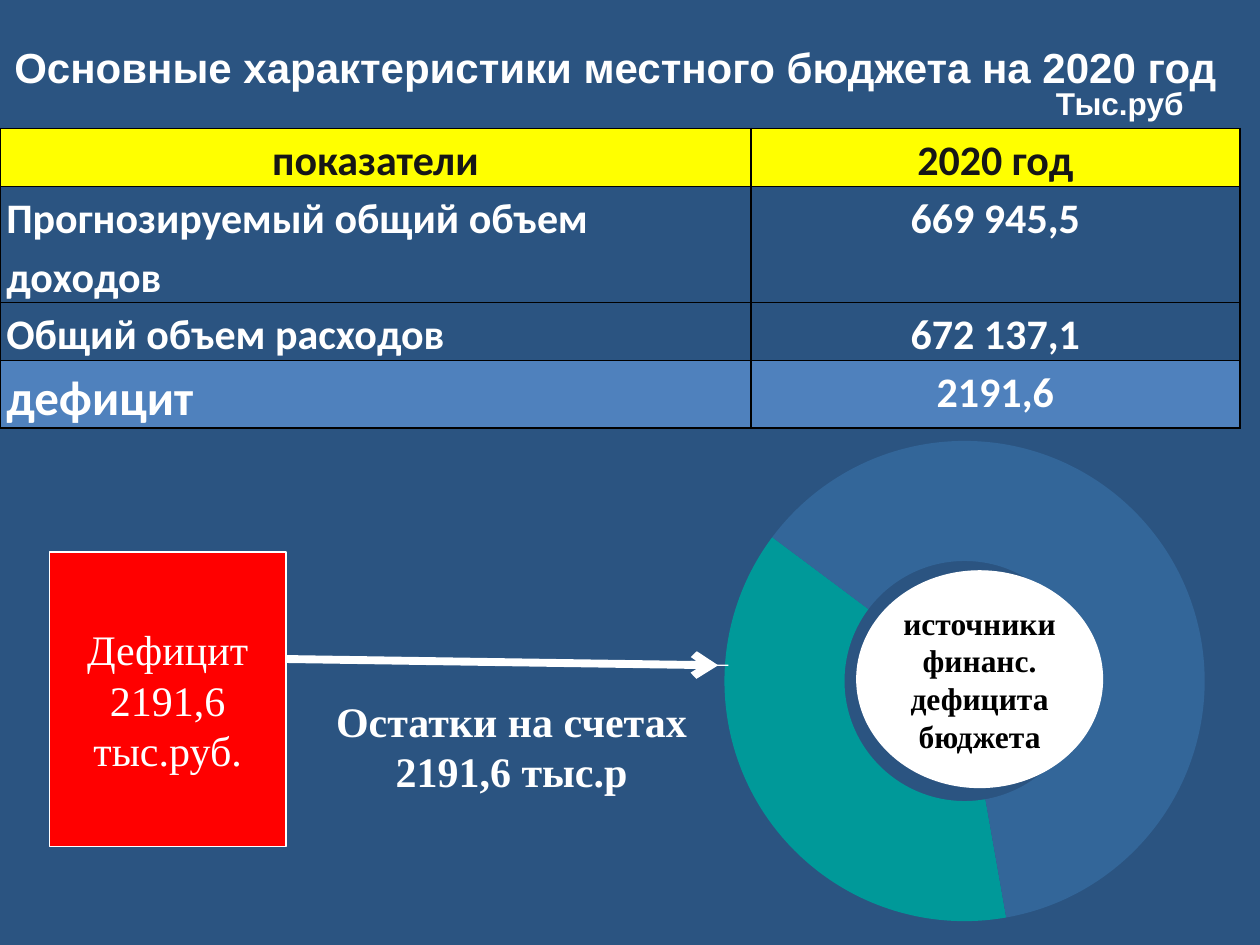
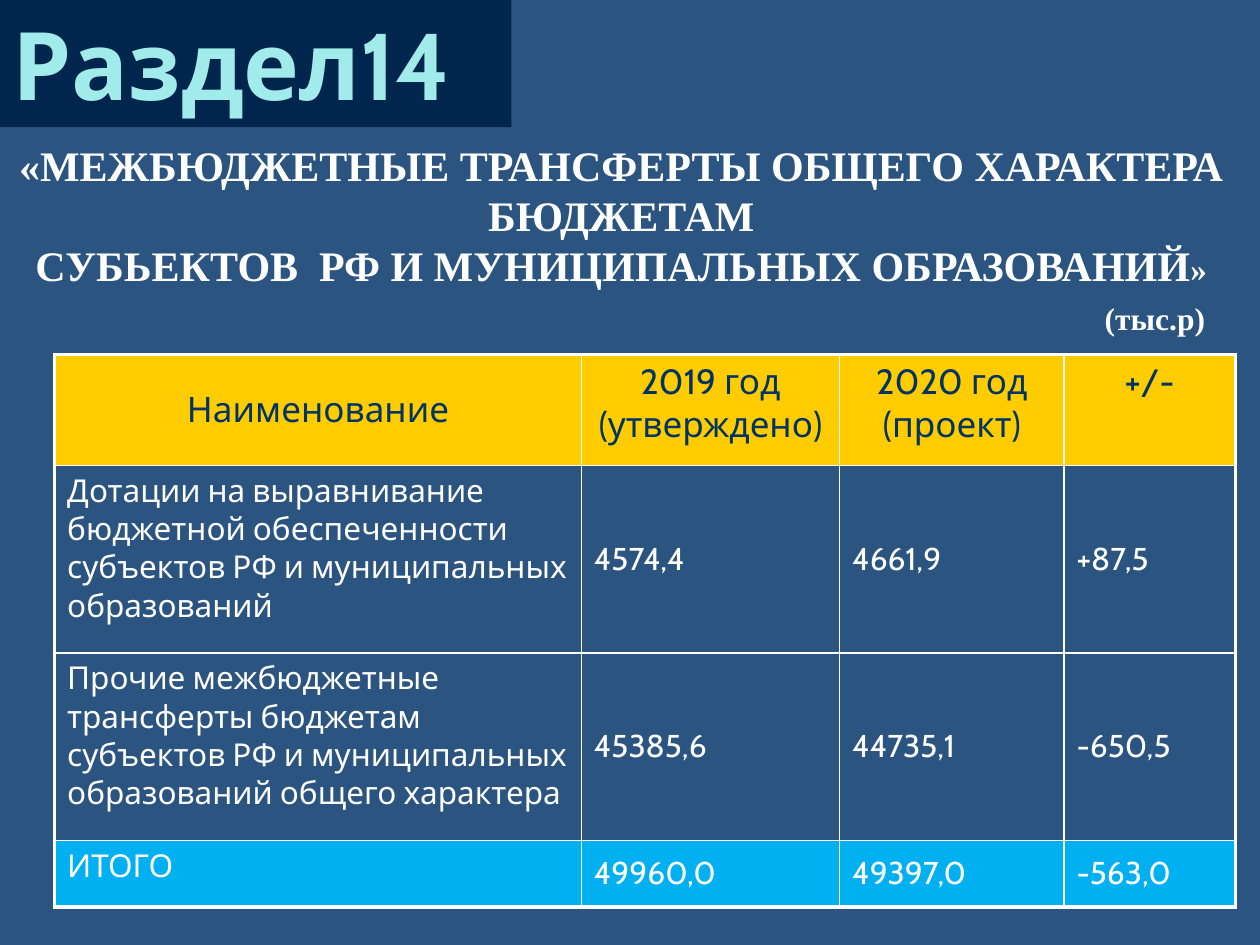
"""Builds two slides on the 2020 local budget: key figures and transfers between budgets."""
import copy

import lxml.etree
import pptx
import pptx.chart.data
import pptx.dml.color
import pptx.enum.chart
import pptx.enum.shapes
import pptx.enum.text
import pptx.oxml
import pptx.oxml.ns
import pptx.util

Pt = pptx.util.Pt
qn = pptx.oxml.ns.qn
rgb = pptx.dml.color.RGBColor.from_string
LEFT, CENTER = pptx.enum.text.PP_ALIGN.LEFT, pptx.enum.text.PP_ALIGN.CENTER
TOP, MIDDLE = pptx.enum.text.MSO_ANCHOR.TOP, pptx.enum.text.MSO_ANCHOR.MIDDLE
SHAPE = pptx.enum.shapes.MSO_SHAPE
WHITE, BACKGROUND = "FFFFFF", "2B5481"
SERIF = "Times New Roman"


def write(tf, text, size=24, font=SERIF, color=WHITE, bold=False, align=LEFT,
          anchor=TOP, wrap=True, spacing=1.0):
    """Write one paragraph per line of text and return the last paragraph."""
    tf.word_wrap = wrap
    tf.vertical_anchor = anchor
    for i, line in enumerate(text.split("\n")):
        p = tf.add_paragraph() if i else tf.paragraphs[0]
        p.alignment, p.line_spacing = align, spacing
        p.space_before = Pt(0)
        r = p.add_run()
        r.text = line
        r.font.size, r.font.name, r.font.bold = Pt(size), font, bold
        r.font.color.rgb = rgb(color)
    return p


def add_grid(s, left, top, widths, heights, line, edge):
    """Add a plain table with 1 pt inner lines and outer lines of the edge width."""
    frame = s.shapes.add_table(len(heights), len(widths), Pt(left), Pt(top),
                               Pt(sum(widths)), Pt(sum(heights)))
    table = frame.table
    table.first_row = table.horz_banding = False
    for col, width in zip(table.columns, widths):
        col.width = Pt(width)
    for row, height in zip(table.rows, heights):
        row.height = Pt(height)
    for i in range(len(heights)):
        for j in range(len(widths)):
            cell = table.cell(i, j)
            outer = {"L": j == 0, "R": j == len(widths) - 1,
                     "T": i == 0, "B": i == len(heights) - 1}
            for side, is_outer in outer.items():
                ln = lxml.etree.SubElement(cell._tc.get_or_add_tcPr(), qn("a:ln" + side),
                                           w=str(Pt(edge if is_outer else 1)))
                fill = lxml.etree.SubElement(ln, qn("a:solidFill"))
                lxml.etree.SubElement(fill, qn("a:srgbClr"), val=line)
            cell.fill.background()
    return table


prs = pptx.Presentation()
prs.slide_width, prs.slide_height = Pt(720), Pt(540)
titles = [
    ("Основные характеристики местного бюджета на 2020 год", "Arial", (0, 20.2, 703.4, 36)),
    ("«МЕЖБЮДЖЕТНЫЕ ТРАНСФЕРТЫ ОБЩЕГО ХАРАКТЕРА\nБЮДЖЕТАМ\n"
     "СУБЬЕКТОВ  РФ И МУНИЦИПАЛЬНЫХ ОБРАЗОВАНИЙ", SERIF, (0, 79.5, 710, 86)),
]
for text, font, box in titles:
    s = prs.slides.add_slide(prs.slide_layouts[5])
    s.background.fill.solid()
    s.background.fill.fore_color.rgb = rgb(BACKGROUND)
    sp = s.shapes.title
    sp.left, sp.top, sp.width, sp.height = map(Pt, box)
    tf = sp.text_frame
    tf.auto_size = pptx.enum.text.MSO_AUTO_SIZE.NONE
    tf.margin_left = tf.margin_right = 0
    title_end = write(tf, text, font=font, bold=True, align=CENTER)
    if font == "Arial":
        tf.margin_top = Pt(3.6)
    else:
        tf.margin_top = 0
budget, transfers = prs.slides

quote = copy.deepcopy(title_end.runs[0]._r)
title_end._p.append(quote)
title_end.runs[1].text = "»"
title_end.runs[1].font.size = Pt(19)

data = pptx.chart.data.CategoryChartData()
data.categories = ["1", "2"]
data.add_series("Series 1", (38, 62))
chart = budget.shapes.add_chart(pptx.enum.chart.XL_CHART_TYPE.DOUGHNUT, Pt(405.2), Pt(243.2),
                                Pt(292), Pt(292), data).chart
chart.has_title = chart.has_legend = False
chart.font.size, chart.font.name = Pt(18), "Cabin"
chart.font.color.rgb = rgb(WHITE)
plot = chart.plots[0]
plot.has_data_labels = False
for i, color in enumerate(("009999", "336699")):
    fmt = plot.series[0].points[i].format
    fmt.fill.solid()
    fmt.fill.fore_color.rgb = rgb(color)
    fmt.line.fill.background()
area = chart._chartSpace.find(".//" + qn("c:plotArea"))
for tag, value in (("c:firstSliceAng", "170"), ("c:holeSize", "50")):
    area.find(".//" + qn(tag)).set("val", value)
for layout in area.findall(qn("c:layout")):
    area.remove(layout)
layout = lxml.etree.Element(qn("c:layout"))
area.insert(0, layout)
manual = lxml.etree.SubElement(layout, qn("c:manualLayout"))
for tag, value in (("layoutTarget", "inner"), ("xMode", "edge"), ("yMode", "edge"),
                   ("x", "0.03"), ("y", "0.03"), ("w", "0.94"), ("h", "0.94")):
    lxml.etree.SubElement(manual, qn("c:" + tag), val=value)

labels = [
    (budget, "Тыс.руб", (596.2, 44.6, 94.3, 29), dict(size=18, font="Arial")),
    (budget, "Остатки на счетах\n2191,6 тыс.р", (174.2, 393.8, 236.2, 65.5), dict(align=CENTER)),
    (transfers, "(тыс.р)", (624.2, 167.5, 75.6, 29), dict(size=18)),
]
for s, text, box, style in labels:
    sp = s.shapes.add_textbox(*map(Pt, box))
    write(sp.text_frame, text, bold=True, **style)

blocks = [
    (budget, SHAPE.FLOWCHART_CONNECTOR, (489.6, 326.2, 140.4, 123.8), WHITE, WHITE,
     "источники\nфинанс.\nдефицита\nбюджета",
     dict(size=18, color="000000", bold=True, align=CENTER, anchor=MIDDLE, wrap=False)),
    (budget, SHAPE.FLOWCHART_PROCESS, (28.1, 315.4, 135.4, 168.5), "FF0000", WHITE,
     "Дефицит\n2191,6\nтыс.руб.", dict(align=CENTER, anchor=MIDDLE, wrap=False)),
    (transfers, SHAPE.RECTANGLE, (0, 0, 292.3, 72.7), "00264D", None,
     "Раздел14", dict(size=54, font="Cabin", color="A1EBEB", bold=True)),
]
for s, kind, box, fill, line, text, style in blocks:
    sp = s.shapes.add_shape(kind, *map(Pt, box))
    sp.shadow.inherit = False
    sp.fill.solid()
    sp.fill.fore_color.rgb = rgb(fill)
    if line:
        sp.line.color.rgb = rgb(line)
        sp.line.width = Pt(0.75)
    else:
        sp.line.fill.background()
    write(sp.text_frame, text, **style)

for end_x, width in ((416.2, 0.75), (410.4, 4.5)):
    arrow = budget.shapes.add_connector(pptx.enum.shapes.MSO_CONNECTOR.STRAIGHT,
                                        Pt(163.5), Pt(376.6), Pt(end_x), Pt(380.2))
    arrow.line.color.rgb = rgb(WHITE)
    arrow.line.width = Pt(width)
    lxml.etree.SubElement(arrow._element.spPr, qn("a:effectLst"))
lxml.etree.SubElement(arrow.line._get_or_add_ln(), qn("a:tailEnd"), type="arrow")

figures = [
    ("показатели", "2020 год"),
    ("Прогнозируемый общий объем доходов", "669 945,5"),
    ("Общий объем расходов", "672 137,1"),
    ("дефицит", "2191,6"),
]
fills = {0: "FFFF00", 3: "4F81BD"}
table = add_grid(budget, 0, 73.4, (429.1, 279.4), (33.1, 66.2, 33.1, 38.6), "000000", 1)
for i, row in enumerate(figures):
    for j, text in enumerate(row):
        cell = table.cell(i, j)
        cell.margin_left = cell.margin_right = Pt(3.6)
        cell.margin_top = cell.margin_bottom = 0
        if i in fills:
            cell.fill.solid()
            cell.fill.fore_color.rgb = rgb(fills[i])
        write(cell.text_frame, text, size=28 if (i, j) == (3, 0) else 24, font="Calibri",
              color=WHITE if i else "161616", bold=True, spacing=1.15,
              align=CENTER if i == 0 or j else LEFT)

grants = [
    ("Наименование", "2019 год (утверждено)", "2020 год (проект)", "+/-"),
    ("Дотации на выравнивание бюджетной обеспеченности субъектов РФ и муниципальных образований",
     "4574,4", "4661,9", "+87,5"),
    ("Прочие межбюджетные трансферты бюджетам субъектов РФ и муниципальных образований "
     "общего характера", "45385,6", "44735,1", "-650,5"),
    ("ИТОГО", "49960,0", "49397,0", "-563,0"),
]
fills = {0: "FFCC00", 3: "00B0F0"}
table = add_grid(transfers, 31.2, 202.5, (301, 147.6, 128.2, 97.9),
                 (63.4, 107.2, 107.2, 38), WHITE, 2.25)
for i, row in enumerate(grants):
    for j, text in enumerate(row):
        cell = table.cell(i, j)
        if i in fills:
            cell.fill.solid()
            cell.fill.fore_color.rgb = rgb(fills[i])
        write(cell.text_frame, text, size=18 if i else 20, font="Cabin",
              color=WHITE if i else "003366", align=LEFT if i else CENTER)
        cell.vertical_anchor = MIDDLE if (i == 0) == (j == 0) else TOP

prs.save("out.pptx")
